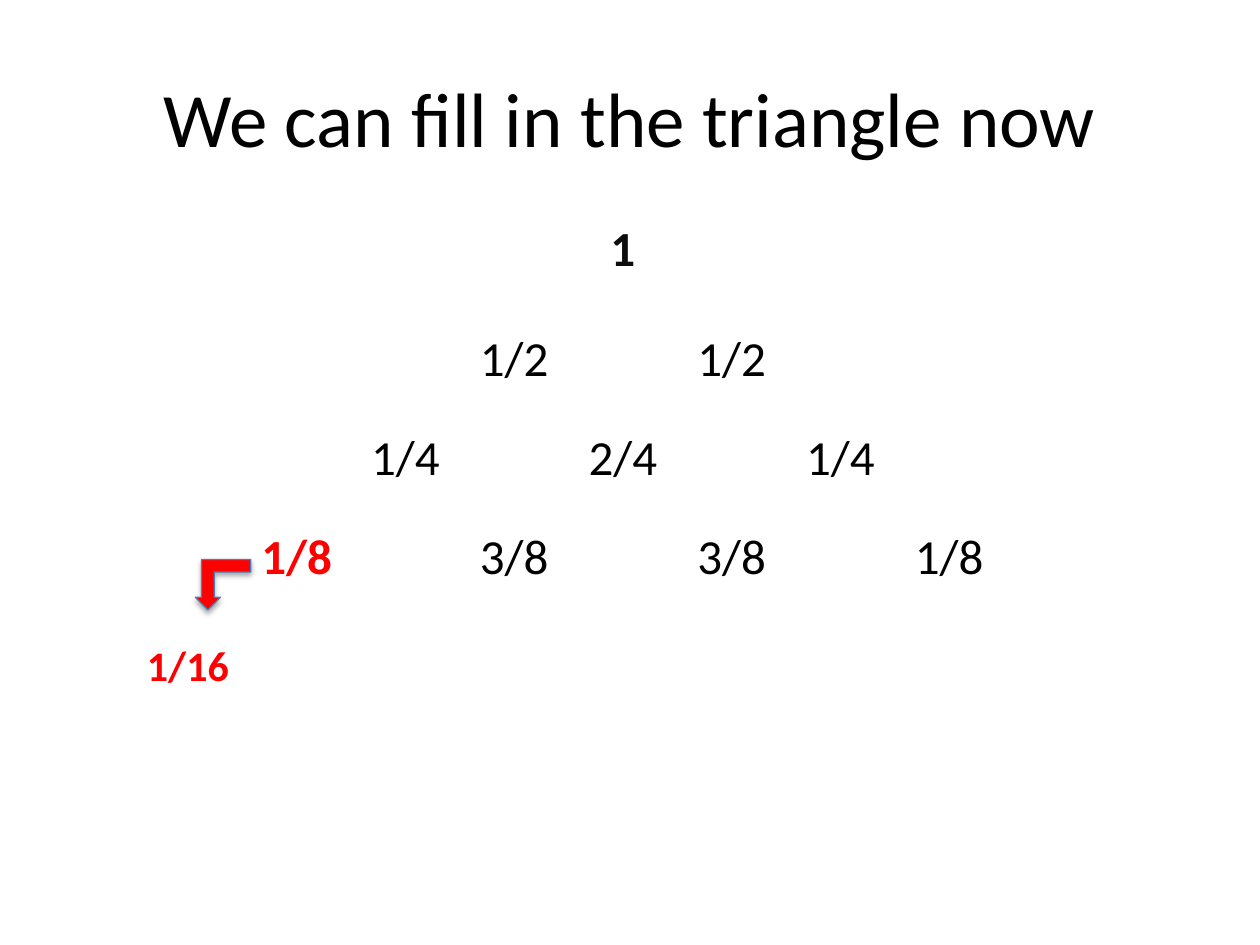
"""Build a slide with a triangle of probabilities, filled in row by row."""
from dataclasses import dataclass
from math import comb

from lxml import etree
from pptx import Presentation
from pptx.dml.color import RGBColor
from pptx.enum.shapes import MSO_SHAPE
from pptx.enum.text import MSO_ANCHOR, PP_ALIGN
from pptx.oxml.ns import qn
from pptx.util import Inches, Pt

CENTER = PP_ALIGN.CENTER
MIDDLE = MSO_ANCHOR.MIDDLE
BENT_ARROW = MSO_SHAPE.BENT_UP_ARROW
TITLE_ONLY = 5

WHITE = RGBColor(0xFF, 0xFF, 0xFF)
BLACK = RGBColor(0x00, 0x00, 0x00)
NEAR_BLACK = RGBColor(0x0D, 0x0D, 0x0D)
RED = RGBColor(0xFF, 0x00, 0x00)
ARROW_BLUE = RGBColor(0x4B, 0x7E, 0xBC)

FONT = "Calibri"
SLIDE_WIDTH, SLIDE_HEIGHT = Inches(10), Inches(7.5)
ROW_HEIGHTS = (0.87, 0.87, 0.7, 0.87, 0.87)
COLUMN_COUNT = 9
MIDDLE_COLUMN = COLUMN_COUNT // 2
FILLED_ROWS = 4


@dataclass(frozen=True)
class Box:
    """A rectangle given as shares of the slide's width and height."""
    left: float
    top: float
    width: float
    height: float

    def lengths(self) -> tuple:
        """Return left, top, width and height as lengths."""
        return (int(self.left * SLIDE_WIDTH), int(self.top * SLIDE_HEIGHT),
                int(self.width * SLIDE_WIDTH), int(self.height * SLIDE_HEIGHT))


@dataclass(frozen=True)
class Entry:
    """A number placed in one cell of the triangle."""
    row: int
    column: int
    text: str
    color: RGBColor = BLACK
    bold: bool = False
    size: int = 28


TITLE_BOX = Box(0.05, 0.04, 0.9, 1 / 6)
TABLE_BOX = Box(0.106, 1.55 / 7.5, 0.777, 4.18 / 7.5)
ARROW_BOX = Box(0.155, 4.44 / 7.5, 0.044, 0.4 / 7.5)


def triangle_entries() -> list[Entry]:
    """List the binomial probabilities and the first one of the next row."""
    entries = [Entry(0, MIDDLE_COLUMN, "1", NEAR_BLACK, True)]
    for row in range(1, FILLED_ROWS):
        for place in range(row + 1):
            is_source = row == FILLED_ROWS - 1 and place == 0
            entries.append(Entry(row, MIDDLE_COLUMN - row + 2 * place,
                                 f"{comb(row, place)}/{2 ** row}",
                                 RED if is_source else BLACK, is_source))
    entries.append(Entry(FILLED_ROWS, 0, f"1/{2 ** FILLED_ROWS}", RED, True, 24))
    return entries


def write(text_frame, text: str, size: int, color: RGBColor, bold: bool = False) -> None:
    """Write one centred run."""
    paragraph = text_frame.paragraphs[0]
    paragraph.alignment = CENTER
    run = paragraph.add_run()
    run.text = text
    run.font.name, run.font.size, run.font.bold = FONT, Pt(size), bold
    run.font.color.rgb = color


def add_borders(cell, row: int) -> None:
    """Give a cell white borders, thicker below the first row."""
    properties = cell._tc.get_or_add_tcPr()
    widths = {"L": 1, "R": 1, "T": 3 if row == 1 else 1, "B": 3 if row == 0 else 1}
    for side, width in widths.items():
        line = etree.SubElement(properties, qn(f"a:ln{side}"), w=str(Pt(width)))
        fill = etree.SubElement(line, qn("a:solidFill"))
        etree.SubElement(fill, qn("a:srgbClr"), val=str(WHITE))


def add_triangle(slide, entries: list[Entry]) -> None:
    """Draw the triangle as a plain white table."""
    table = slide.shapes.add_table(len(ROW_HEIGHTS), COLUMN_COUNT, *TABLE_BOX.lengths()).table
    table.first_row = table.horz_banding = False
    for row, height in enumerate(ROW_HEIGHTS):
        table.rows[row].height = Inches(height)
        for column in range(COLUMN_COUNT):
            cell = table.cell(row, column)
            add_borders(cell, row)
            cell.fill.solid()
            cell.fill.fore_color.rgb = WHITE
            cell.vertical_anchor = MIDDLE
            cell.margin_left = cell.margin_right = Inches(0.05)
    for entry in entries:
        write(table.cell(entry.row, entry.column).text_frame,
              entry.text, entry.size, entry.color, entry.bold)


def add_arrow(slide) -> None:
    """Draw the shadowed arrow that leads down to the next row."""
    arrow = slide.shapes.add_shape(BENT_ARROW, *ARROW_BOX.lengths())
    arrow.rotation = 180
    arrow.fill.solid()
    arrow.fill.fore_color.rgb = RED
    arrow.line.color.rgb = ARROW_BLUE
    arrow.line.width = Pt(0.75)
    arrow.shadow.inherit = False
    effects = arrow._element.spPr.find(qn("a:effectLst"))
    shadow = etree.SubElement(effects, qn("a:outerShdw"), blurRad=str(Pt(3.1)),
                              dist=str(Pt(1.8)), dir="5400000", rotWithShape="0")
    color = etree.SubElement(shadow, qn("a:srgbClr"), val=str(BLACK))
    etree.SubElement(color, qn("a:alpha"), val="35000")


def main() -> None:
    """Build and save the presentation."""
    presentation = Presentation()
    presentation.slide_width, presentation.slide_height = SLIDE_WIDTH, SLIDE_HEIGHT
    slide = presentation.slides.add_slide(presentation.slide_layouts[TITLE_ONLY])
    title = slide.shapes.title
    title.left, title.top, title.width, title.height = TITLE_BOX.lengths()
    title.text_frame.vertical_anchor = MIDDLE
    write(title.text_frame, "We can fill in the triangle now", 44, BLACK)
    add_triangle(slide, triangle_entries())
    add_arrow(slide)
    presentation.save("out.pptx")


if __name__ == "__main__":
    main()
